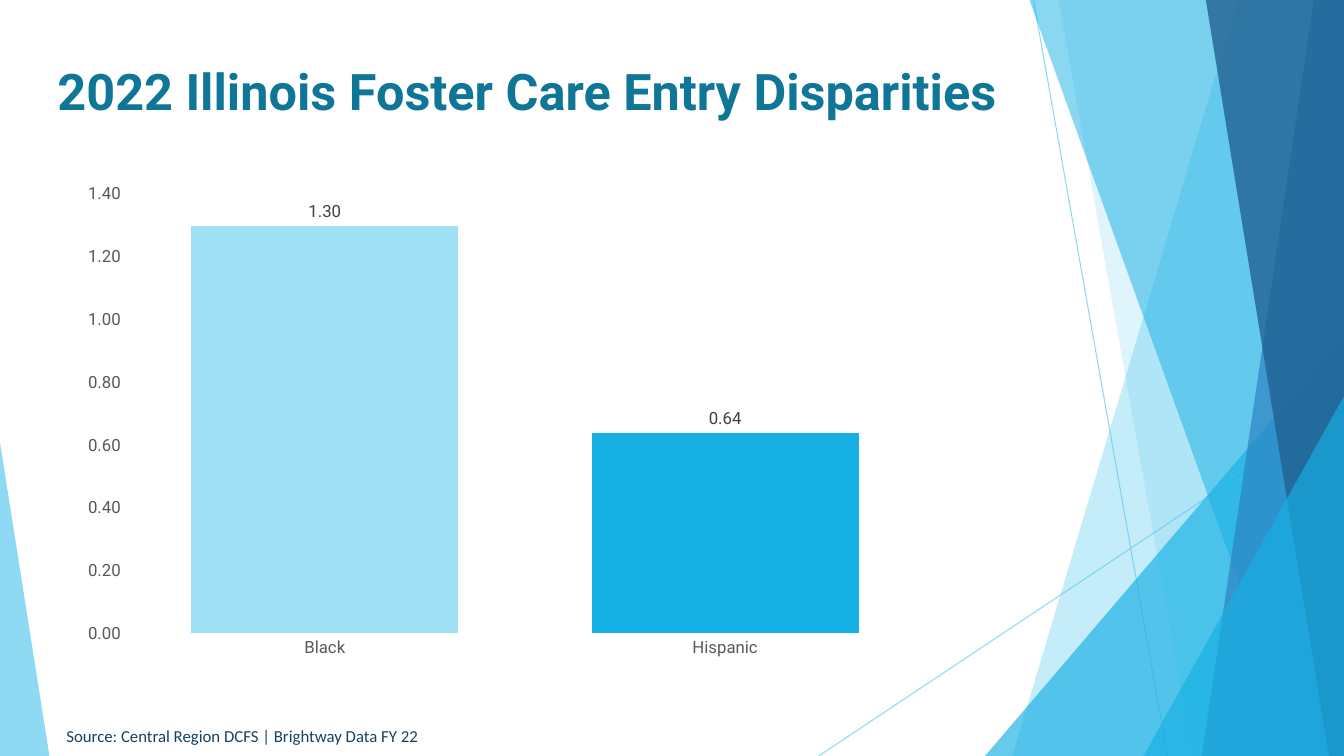
from lxml.etree import SubElement
from pptx import Presentation
from pptx.chart.data import CategoryChartData
from pptx.dml.color import RGBColor
from pptx.enum.chart import XL_CHART_TYPE, XL_LABEL_POSITION, XL_TICK_MARK
from pptx.enum.shapes import MSO_CONNECTOR, MSO_SHAPE
from pptx.enum.text import MSO_ANCHOR, MSO_AUTO_SIZE, PP_ALIGN
from pptx.oxml.ns import qn
from pptx.util import Inches, Pt

SKY = RGBColor(0x5F, 0xCB, 0xEF)
PALE_SKY = RGBColor(0x9F, 0xE0, 0xF5)
CYAN = RGBColor(0x17, 0xB0, 0xE4)
BLUE = RGBColor(0x2E, 0x83, 0xC3)
NAVY = RGBColor(0x22, 0x62, 0x92)
TEAL = RGBColor(0x0F, 0x76, 0x98)
INK = RGBColor(0x17, 0x41, 0x62)
AXIS_GREY = RGBColor(0x59, 0x59, 0x59)
LABEL_GREY = RGBColor(0x40, 0x40, 0x40)

WIDTH, HEIGHT = 13.33, 7.5


def style_font(font, name, size, color, bold=False):
    font.name = name
    font.size = Pt(size)
    font.color.rgb = color
    font.bold = bold


def set_opacity(shape, percent):
    for color in shape._element.spPr.iter(qn("a:srgbClr")):
        SubElement(color, qn("a:alpha")).set("val", str(percent * 1000))


def paint(shape, color, opacity):
    shape.shadow.inherit = False
    shape.fill.solid()
    shape.fill.fore_color.rgb = color
    set_opacity(shape, opacity)
    shape.line.fill.background()


def add_ray(page, start, end):
    ray = page.shapes.add_connector(
        MSO_CONNECTOR.STRAIGHT, *(Inches(value) for value in start + end))
    ray.line.color.rgb = SKY
    ray.line.width = Pt(0.75)
    set_opacity(ray, 70)
    SubElement(ray._element.spPr, qn("a:effectLst"))


def add_band(page, box, top_x, bottom_x, color, opacity):
    left, top, width, height = box
    right, bottom = left + width, top + height
    corners = [(left + top_x, top), (right, top), (right, bottom), (left + bottom_x, bottom)]
    points = [(Inches(x), Inches(y)) for x, y in corners]
    builder = page.shapes.build_freeform(*points[0])
    builder.add_line_segments(points[1:], close=True)
    paint(builder.convert_to_shape(), color, opacity)


def add_corner(page, box, peak, color, opacity):
    corner = page.shapes.add_shape(
        MSO_SHAPE.ISOSCELES_TRIANGLE, *(Inches(value) for value in box))
    corner.adjustments[0] = peak
    paint(corner, color, opacity)


def add_right_corner(page, box, width, height, color, opacity):
    left, top, full_width, full_height = box
    place = (left + full_width - width, top + full_height - height, width, height)
    add_corner(page, place, 1, color, opacity)


def add_facets(page, box):
    left, top, width, height = box
    right, bottom = left + width, top + height
    add_ray(page, (left + 10.25, top), (left + 11.58, bottom))
    add_ray(page, (right, top + 4.03), (left + 8.12, bottom))
    add_band(page, box, 12.28, 10.04, SKY, 36)
    add_band(page, box, 10.5, 11.83, SKY, 20)
    add_right_corner(page, box, 3.56, 4.17, CYAN, 66)
    add_band(page, box, 10.21, 12.91, CYAN, 50)
    add_band(page, box, 13.03, 11.92, BLUE, 70)
    add_band(page, box, 11.96, 13.18, NAVY, 80)
    add_right_corner(page, box, 1.99, 3.57, CYAN, 66)
    add_corner(page, (left, bottom - 3.11, 0.49, 3.11), 0, SKY, 70)


def add_title(page, box):
    title = page.shapes.title
    title.left, title.top, title.width, title.height = (Inches(value) for value in box)
    frame = title.text_frame
    frame.text = "2022 Illinois Foster Care Entry Disparities"
    frame.auto_size = MSO_AUTO_SIZE.NONE
    frame.vertical_anchor = MSO_ANCHOR.MIDDLE
    para = frame.paragraphs[0]
    para.alignment = PP_ALIGN.LEFT
    style_font(para.font, "Roboto", 36, TEAL, bold=True)
    page.shapes._spTree.append(title._element)


def add_entry_chart(page, box):
    data = CategoryChartData(number_format="0.00")
    data.categories = ["Black", "Hispanic"]
    data.add_series("Series 1", (1.3, 0.64))
    chart = page.shapes.add_chart(
        XL_CHART_TYPE.COLUMN_CLUSTERED, *(Inches(value) for value in box), data).chart
    chart.has_legend = False
    chart.has_title = False
    chart.font.name = "Roboto"
    chart.font.size = Pt(12)

    for axis in (chart.category_axis, chart.value_axis):
        axis.has_major_gridlines = False
        axis.major_tick_mark = XL_TICK_MARK.NONE
        axis.minor_tick_mark = XL_TICK_MARK.NONE
        axis.format.line.fill.background()
        style_font(axis.tick_labels.font, "Roboto", 12, AXIS_GREY)
    values = chart.value_axis
    values.minimum_scale, values.maximum_scale, values.major_unit = 0, 1.4, 0.2
    values.tick_labels.number_format = "0.00"
    values.tick_labels.number_format_is_linked = False

    plot = chart.plots[0]
    plot.gap_width = 50
    plot.vary_by_categories = False
    series = plot.series[0]
    series.format.fill.solid()
    series.format.fill.fore_color.rgb = SKY
    for index, color in enumerate((PALE_SKY, CYAN)):
        fill = series.points[index].format.fill
        fill.solid()
        fill.fore_color.rgb = color
    labels = series.data_labels
    labels.show_value = True
    labels.number_format = "0.00"
    labels.number_format_is_linked = False
    labels.position = XL_LABEL_POSITION.OUTSIDE_END
    style_font(labels.font, "Roboto", 12, LABEL_GREY)


def add_source(page, box):
    frame = page.shapes.add_textbox(*(Inches(value) for value in box)).text_frame
    frame.word_wrap = False
    frame.auto_size = MSO_AUTO_SIZE.SHAPE_TO_FIT_TEXT
    frame.text = "Source: Central Region DCFS | Brightway Data FY 22"
    style_font(frame.paragraphs[0].font, "Calibri", 12, INK)


def main():
    deck = Presentation()
    deck.slide_width, deck.slide_height = Inches(WIDTH), Inches(HEIGHT)
    page = deck.slides.add_slide(deck.slide_layouts[5])
    add_facets(page, (0, 0, WIDTH, HEIGHT))
    add_title(page, (0.47, 0.59, 9.93, 0.62))
    add_entry_chart(page, (0.7, 1.73, 8.65, 4.89))
    add_source(page, (0.56, 7.15, 3.76, 0.3))
    deck.save("out.pptx")


if __name__ == "__main__":
    main()
